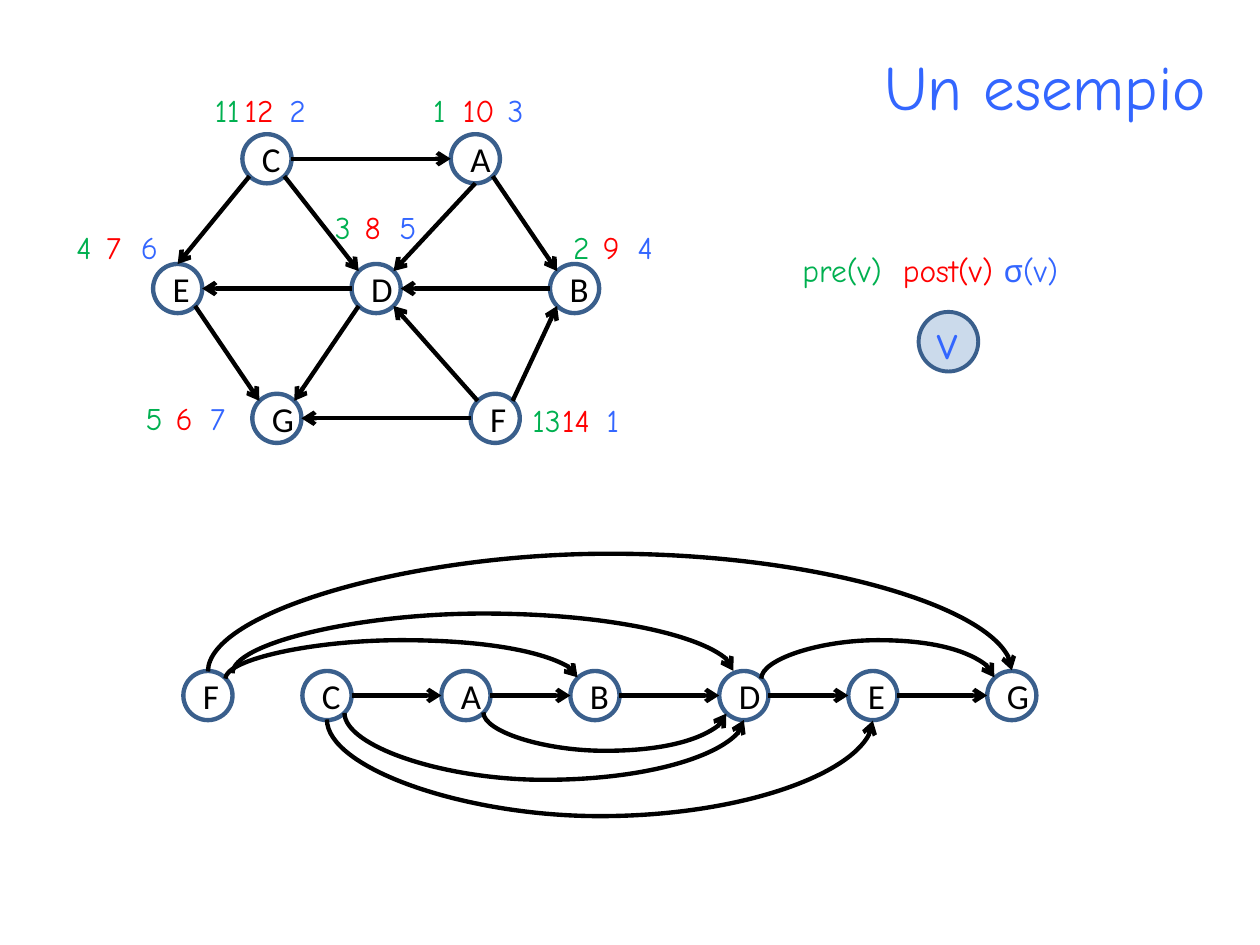
import collections
import dataclasses

import lxml.etree
import pptx
import pptx.dml.color
import pptx.enum.shapes
import pptx.enum.text
import pptx.oxml.ns
import pptx.util

Box = collections.namedtuple("Box", "left top width height")
Point = collections.namedtuple("Point", "x y")
inches = pptx.util.Inches
qn = pptx.oxml.ns.qn


@dataclasses.dataclass(frozen=True)
class Theme:
    """Colours, fonts and sizes of the slide."""
    pre: str = "00B050"
    post: str = "FF0000"
    sigma: str = "3366FF"
    ink: str = "000000"
    outline: str = "3A5F8C"
    vertex: str = "4F81BD"
    hand: str = "Comic Neue"
    plain: str = "Calibri"
    title_size: int = 36
    vertex_size: int = 28
    node_size: int = 20
    label_size: int = 18
    stroke: float = 2.5
    legend_stroke: float = 2.25
    node: float = 0.39


THEME = Theme()
PORTS = {
    "N": (0, -1), "S": (0, 1), "E": (1, 0), "W": (-1, 0),
    "NE": (0.71, -0.71), "NW": (-0.71, -0.71),
    "SE": (0.71, 0.71), "SW": (-0.71, 0.71),
    "ENE": (1, -0.9), "NNW": (-0.43, -1),
}
GRAPH_COLUMNS, GRAPH_ROWS, CHAIN_COLUMNS = 40, 2, 81
GRAPH_NODES = {"D": (20, 1), "C": (9, 0), "A": (30, 0), "F": (32, 2),
               "B": (40, 1), "E": (0, 1), "G": (10, 2)}
GRAPH_EDGES = ["C SE D NW", "A SE B NW", "E SE G NW", "C E A W", "A S D NE",
               "C SW E N", "D SW G NE", "F W G E", "B W D E", "F NW D SE",
               "F NE B SW", "D W E E"]
VISITS = [
    (5.5, -0.57, "11", "12", "2", 4.5),
    (27.5, -0.57, "1", "10", "3", 4.5),
    (17.6, 0.33, "3", "8", "5", 3.5),
    (-8.45, 0.49, "4", "7", "6", 3.5),
    (41.6, 0.49, "2", "9", "4", 3.5),
    (37.5, 1.82, "13", "14", "1", 4.5),
    (-1.46, 1.8, "5", "6", "7", 3.5),
]
CHAIN_NODES = {"F": 0, "C": 12, "A": 26, "B": 39, "D": 54, "E": 67, "G": 81}
CHAIN_ARCS = [("F NE B NW", -0.31), ("F ENE D NNW", -0.47), ("F N G N", -0.95),
              ("A SE D SW", 0.31), ("C SE D S", 0.53), ("C S E S", 0.78),
              ("D NE G NW", -0.31)]


def rgb(color):
    """Turn a hex string into a colour."""
    return pptx.dml.color.RGBColor.from_string(color)


def format_run(run, size, font, color):
    """Set size, font and colour of a run."""
    run.font.size = pptx.util.Pt(size)
    run.font.name = font
    run.font.color.rgb = rgb(color)


def add_label(shapes, at, width, height, words, size=THEME.label_size):
    """Place one line made of (text, colour) pairs."""
    label = shapes.add_textbox(*map(inches, (at.x, at.y, width, height)))
    label.text_frame.word_wrap = False
    label.text_frame.auto_size = pptx.enum.text.MSO_AUTO_SIZE.SHAPE_TO_FIT_TEXT
    paragraph = label.text_frame.paragraphs[0]
    for text, color in words:
        run = paragraph.add_run()
        run.text = text
        format_run(run, size, THEME.hand, color)
    return paragraph


def add_circle(shapes, left, top, size, stroke):
    """Draw an unfilled outlined circle."""
    circle = shapes.add_shape(pptx.enum.shapes.MSO_SHAPE.OVAL,
                              *map(inches, (left, top, size, size)))
    circle.shadow.inherit = False
    circle.fill.background()
    circle.line.color.rgb = rgb(THEME.outline)
    circle.line.width = pptx.util.Pt(stroke)
    return circle


def add_node(shapes, name, centre):
    """Draw a named graph node around its centre."""
    circle = add_circle(shapes, centre.x - THEME.node / 2,
                        centre.y - THEME.node / 2, THEME.node, THEME.stroke)
    circle.text_frame.text = name
    circle.text_frame.vertical_anchor = pptx.enum.text.MSO_ANCHOR.MIDDLE
    paragraph = circle.text_frame.paragraphs[0]
    paragraph.alignment = pptx.enum.text.PP_ALIGN.CENTER
    format_run(paragraph.runs[0], THEME.node_size, THEME.plain, THEME.ink)


def edge_ends(centres, edge):
    """Find both end points of an edge such as 'C SE D NW'."""
    source, source_port, target, target_port = edge.split()
    return [Point(centres[name].x + PORTS[port][0] * THEME.node / 2,
                  centres[name].y + PORTS[port][1] * THEME.node / 2)
            for name, port in ((source, source_port), (target, target_port))]


def add_arrow(shapes, start, end, kind=pptx.enum.shapes.MSO_CONNECTOR.STRAIGHT):
    """Draw an arrow between two points."""
    arrow = shapes.add_connector(kind, *map(inches, start + end))
    arrow.line.color.rgb = rgb(THEME.ink)
    arrow.line.width = pptx.util.Pt(THEME.stroke)
    properties = arrow.line._get_or_add_ln()
    lxml.etree.SubElement(properties, qn("a:tailEnd"), type="arrow")
    lxml.etree.SubElement(arrow._element.spPr, qn("a:effectLst"))
    return arrow


def add_arc(shapes, start, end, depth):
    """Draw a curved arrow that bulges by depth, upwards when negative."""
    arc = add_arrow(shapes, start, end, pptx.enum.shapes.MSO_CONNECTOR.CURVE)
    drop = max(abs(end.y - start.y), 0.01)
    span = end.x - start.x
    arc.left = inches((start.x + end.x - drop) / 2)
    arc.top = inches((start.y + end.y - span) / 2)
    arc.width, arc.height = inches(drop), inches(span)
    frame = arc._element.spPr.find(qn("a:xfrm"))
    frame.set("rot", str((90 if depth < 0 else 270) * 60000))
    frame.set("flipH", "1")
    frame.set("flipV", "1" if depth < 0 else "0")
    geometry = arc._element.spPr.find(qn("a:prstGeom"))
    adjustments = geometry.find(qn("a:avLst"))
    if adjustments is None:
        adjustments = lxml.etree.SubElement(geometry, qn("a:avLst"))
    lxml.etree.SubElement(adjustments, qn("a:gd"), name="adj1",
                          fmla=f"val {round(abs(depth) / drop * 100000)}")


def place_title(slide, box):
    """Put the heading in the title placeholder."""
    title = slide.shapes.title
    title.left, title.top, title.width, title.height = map(inches, box)
    title.text_frame.text = "Un esempio"
    title.text_frame.vertical_anchor = pptx.enum.text.MSO_ANCHOR.MIDDLE
    paragraph = title.text_frame.paragraphs[0]
    paragraph.alignment = pptx.enum.text.PP_ALIGN.RIGHT
    format_run(paragraph.runs[0], THEME.title_size, THEME.hand, THEME.sigma)


def place_graph(shapes, box):
    """Draw the graph with its visit numbers on a column and row grid."""
    column, row = box.width / GRAPH_COLUMNS, box.height / GRAPH_ROWS

    def cell(across, down):
        """Locate a grid position."""
        return Point(box.left + across * column, box.top + down * row)

    centres = {name: cell(*place) for name, place in GRAPH_NODES.items()}
    for name, centre in centres.items():
        add_node(shapes, name, centre)
    for edge in GRAPH_EDGES:
        add_arrow(shapes, *edge_ends(centres, edge))
    for across, down, pre, post, sigma, gap in VISITS:
        for number, color, shift in ((post, THEME.post, 0), (pre, THEME.pre, -3),
                                     (sigma, THEME.sigma, gap)):
            add_label(shapes, cell(across + shift, down),
                      (3 + 1.5 * len(number)) * column, 0.39 * row, [(number, color)])


def place_legend(shapes, box):
    """Explain the three numbers above a sample vertex."""
    names = add_label(shapes, Point(box.left, box.top), box.width, box.height * 0.39,
                      [("pre(v)\t", THEME.pre), ("post(v) ", THEME.post),
                       ("σ(v)", THEME.sigma)])
    stops = lxml.etree.SubElement(names._p.get_or_add_pPr(), qn("a:tabLst"))
    lxml.etree.SubElement(stops, qn("a:tab"), pos=str(inches(box.width * 0.32)), algn="l")
    vertex = add_circle(shapes, box.left + box.width * 0.41,
                        box.top + box.height * 0.52, box.width * 0.19,
                        THEME.legend_stroke)
    vertex.fill.solid()
    vertex.fill.fore_color.rgb = rgb(THEME.vertex)
    tint = vertex._element.spPr.find(qn("a:solidFill")).find(qn("a:srgbClr"))
    lxml.etree.SubElement(tint, qn("a:alpha"), val="29000")
    add_label(shapes, Point(box.left + box.width * 0.43, box.top + box.height * 0.46),
              box.width * 0.16, box.height * 0.55, [("v", THEME.sigma)],
              THEME.vertex_size)


def place_chain(shapes, box):
    """Draw the nodes in topological order with all edges pointing right."""
    column = box.width / CHAIN_COLUMNS
    centres = {name: Point(box.left + across * column, box.top + box.height / 2)
               for name, across in CHAIN_NODES.items()}
    for name, centre in centres.items():
        add_node(shapes, name, centre)
    order = list(centres)[1:]
    for source, target in zip(order, order[1:]):
        add_arrow(shapes, *edge_ends(centres, f"{source} E {target} W"))
    for edge, depth in CHAIN_ARCS:
        add_arc(shapes, *edge_ends(centres, edge), depth)


def main():
    """Build and save the slide."""
    deck = pptx.Presentation()
    deck.slide_width, deck.slide_height = inches(10), inches(7.5)
    slide = deck.slides.add_slide(deck.slide_layouts.get_by_name("Title Only"))
    place_title(slide, Box(0.67, 0.05, 9, 1.25))
    place_graph(slide.shapes, Box(1.41, 1.26, 3.15, 2.06))
    place_legend(slide.shapes, Box(6.27, 1.94, 2.49, 1.03))
    place_chain(slide.shapes.add_group_shape().shapes, Box(1.65, 5.32, 6.38, 0.4))
    deck.save("out.pptx")


if __name__ == "__main__":
    main()
